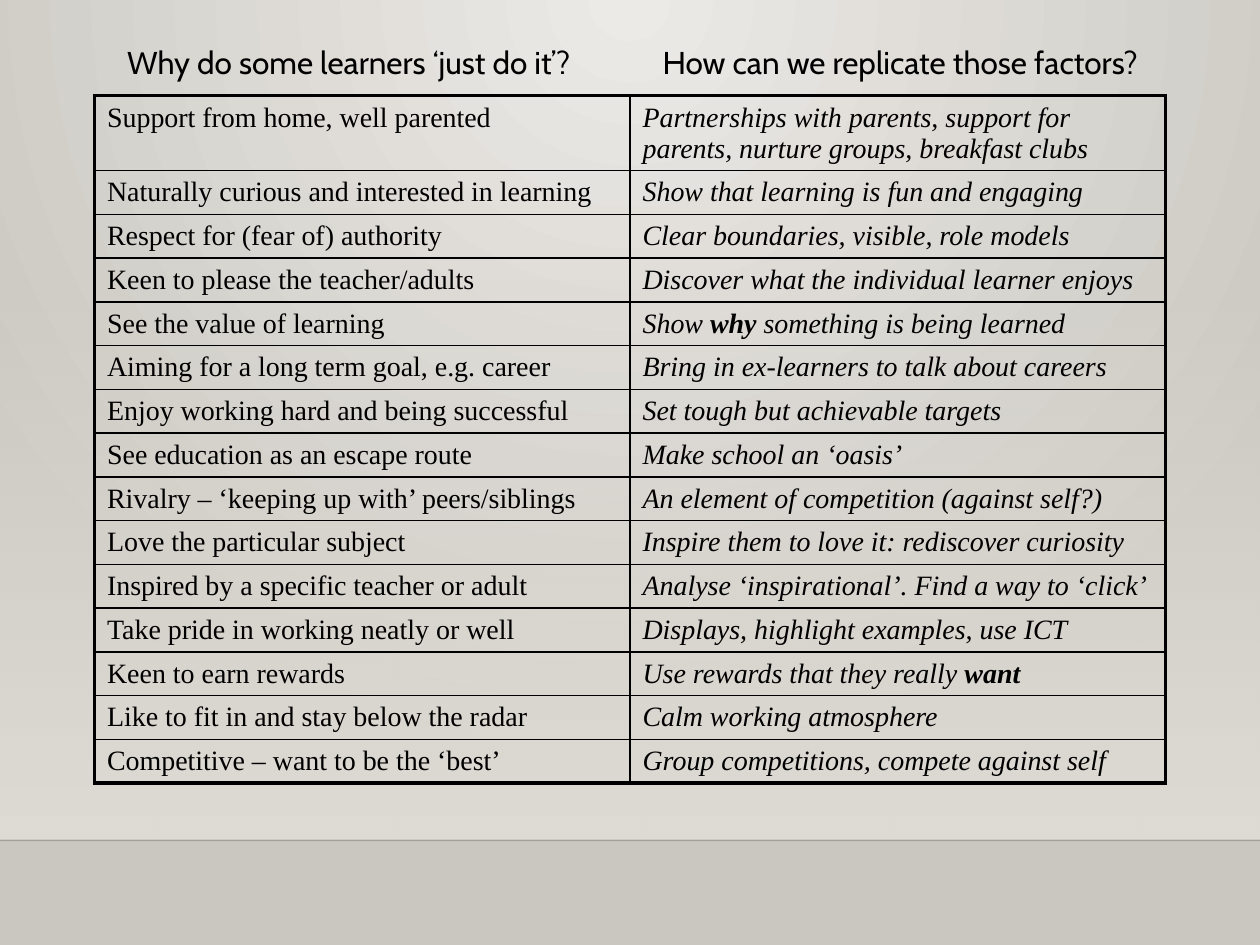
from pptx import Presentation
from pptx.dml.color import RGBColor
from pptx.enum.shapes import MSO_CONNECTOR as Connector, MSO_SHAPE as Shape
from pptx.enum.text import MSO_AUTO_SIZE as AutoSize
from pptx.oxml import parse_xml
from pptx.oxml.ns import nsdecls, qn
from pptx.util import Inches, Pt

BLACK = RGBColor(0x00, 0x00, 0x00)
HORIZON = RGBColor(0x00, 0x00, 0x01)
LIGHT = RGBColor(0xEC, 0xEA, 0xE7)
STONE = RGBColor(0xCA, 0xC7, 0xC1)
SAND = RGBColor(0xDF, 0xDB, 0xD5)

HEADINGS = [
    (0.91, "Why do some learners ‘just do it’?"),
    (5.16, "How can we replicate those factors?"),
]
# Asterisks enclose bold words
FACTORS = [
    ("Support from home, well parented",
     "Partnerships with parents, support for parents, nurture groups, breakfast clubs"),
    ("Naturally curious and interested in learning", "Show that learning is fun and engaging"),
    ("Respect for (fear of) authority", "Clear boundaries, visible, role models"),
    ("Keen to please the teacher/adults", "Discover what the individual learner enjoys"),
    ("See the value of learning", "Show *why *something is being learned"),
    ("Aiming for a long term goal, e.g. career", "Bring in ex-learners to talk about careers"),
    ("Enjoy working hard and being successful", "Set tough but achievable targets"),
    ("See education as an escape route", "Make school an ‘oasis’"),
    ("Rivalry – ‘keeping up with’ peers/siblings", "An element of competition (against self?)"),
    ("Love the particular subject", "Inspire them to love it: rediscover curiosity"),
    ("Inspired by a specific teacher or adult", "Analyse ‘inspirational’. Find a way to ‘click’"),
    ("Take pride in working neatly or well", "Displays, highlight examples, use ICT"),
    ("Keen to earn rewards", "Use rewards that they really *want*"),
    ("Like to fit in and stay below the radar", "Calm working atmosphere"),
    ("Competitive – want to be the ‘best’", "Group competitions, compete against self"),
]


def set_gradient(parent, start, end, direction, start_alpha=100):
    """Give the gradient fill inside parent two stops and a direction."""
    gradient = parent.find(".//" + qn("a:gradFill"))
    for child in list(gradient):
        gradient.remove(child)
    gradient.append(parse_xml(
        f'<a:gsLst {nsdecls("a")}>'
        f'<a:gs pos="0"><a:srgbClr val="{start}"><a:alpha val="{start_alpha * 1000}"/></a:srgbClr></a:gs>'
        f'<a:gs pos="100000"><a:srgbClr val="{end}"/></a:gs></a:gsLst>'))
    gradient.append(parse_xml(direction))


def format_font(font, **values):
    for name, value in values.items():
        setattr(font, name, value)
    font.color.rgb = BLACK


prs = Presentation()
prs.slide_width, prs.slide_height = Inches(10), Inches(7.5)
slide = prs.slides.add_slide(prs.slide_layouts[6])

# Background glow from the top centre
slide.background.fill.gradient()
set_gradient(slide.element, LIGHT, STONE,
             f'<a:path {nsdecls("a")} path="circle">'
             '<a:fillToRect l="43000" r="43000" b="100000"/></a:path>')

# Wall fading in towards the floor
wall = slide.shapes.add_shape(Shape.RECTANGLE, 0, Inches(2.2), Inches(10), Inches(4.46))
wall.shadow.inherit = False
wall.line.fill.background()
wall.fill.gradient()
set_gradient(wall.element, SAND, SAND, f'<a:lin {nsdecls("a")} ang="5400000" scaled="0"/>', 0)

# Floor edge
edge = slide.shapes.add_connector(Connector.STRAIGHT, 0, Inches(6.67), Inches(10), Inches(6.67))
edge.line.color.rgb = HORIZON
edge.line.width = Pt(1)
edge.element.find(".//" + qn("a:srgbClr")).append(
    parse_xml(f'<a:alpha {nsdecls("a")} val="20000"/>'))
edge.element.spPr.append(parse_xml(f'<a:effectLst {nsdecls("a")}/>'))

# Table of factors and responses
last_row = len(FACTORS) - 1
frame = slide.shapes.add_table(len(FACTORS), 2, Inches(0.75), Inches(0.76), Inches(8.5), Inches(4.5))
table = frame.table
table.first_row = table.horz_banding = False
for row, pair in enumerate(FACTORS):
    table.rows[row].height = Inches(0.3)  # rows grow to fit their text
    for col, text in enumerate(pair):
        cell = table.cell(row, col)
        cell.fill.background()
        paragraph = cell.text_frame.paragraphs[0]
        for part, words in enumerate(text.split("*")):
            if words:
                run = paragraph.add_run()
                run.text = words
                format_font(run.font, name="Times New Roman", size=Pt(16),
                            italic=col == 1, bold=part % 2 == 1)

        # Thick outer frame, thin inner lines
        outer = {"L": col == 0, "R": col == 1, "T": row == 0, "B": row == last_row}
        for order, (side, is_outer) in enumerate(outer.items()):
            width = Pt(2.25 if is_outer else 1)
            cell._tc.get_or_add_tcPr().insert(order, parse_xml(
                f'<a:ln{side} {nsdecls("a")} w="{width}"><a:solidFill>'
                f'<a:srgbClr val="{BLACK}"/></a:solidFill></a:ln{side}>'))
frame.height = Inches(5.77)

# Column headings
for left, text in HEADINGS:
    heading = slide.shapes.add_textbox(Inches(left), Inches(0.29), Inches(4.09), Inches(0.4))
    heading.text_frame.word_wrap = True
    heading.text_frame.auto_size = AutoSize.SHAPE_TO_FIT_TEXT
    run = heading.text_frame.paragraphs[0].add_run()
    run.text = text
    format_font(run.font, name="Cabin", size=Pt(18))

prs.save("out.pptx")
